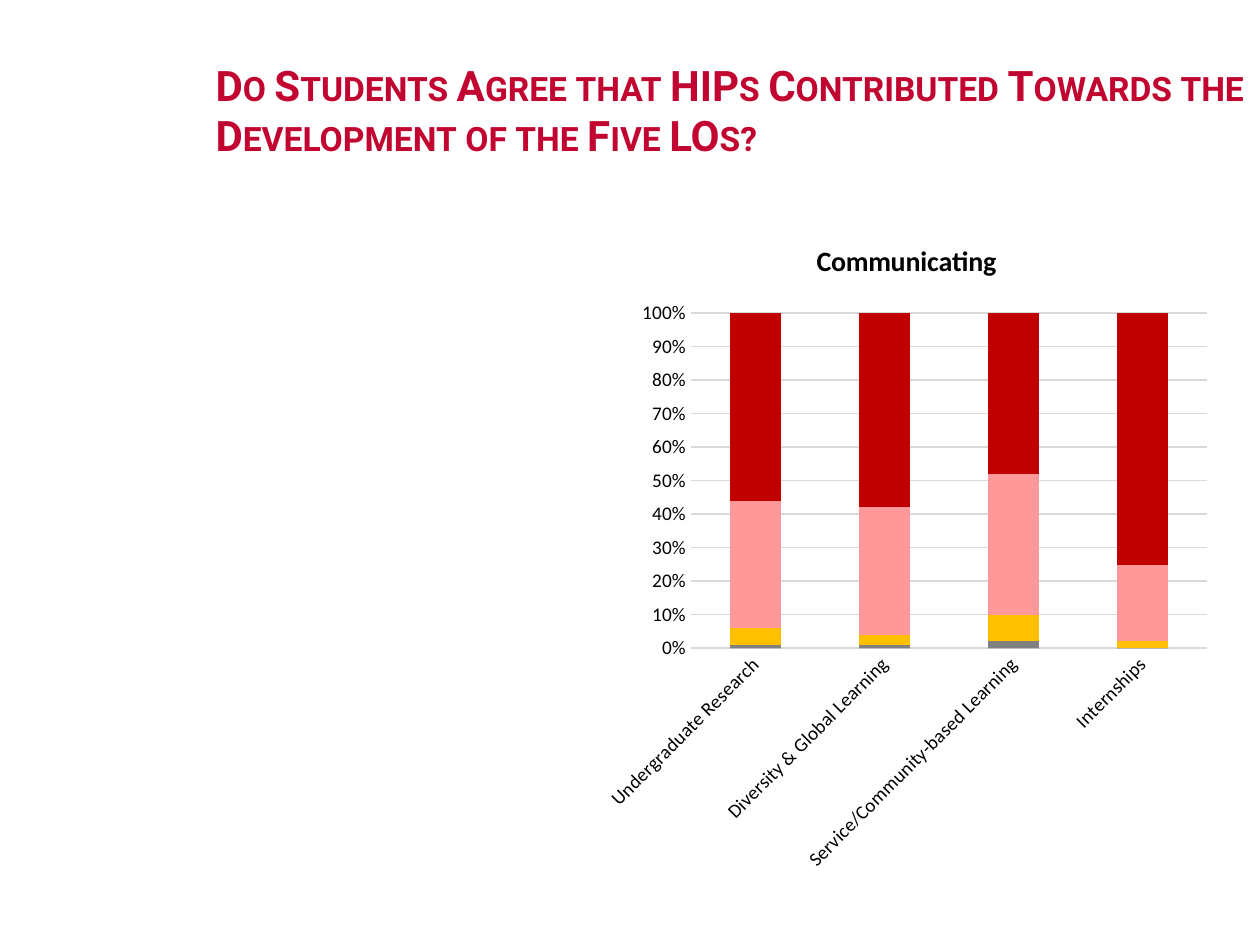
from pptx import Presentation
from pptx.chart.data import CategoryChartData
from pptx.dml.color import RGBColor
from pptx.enum.chart import XL_CHART_TYPE as ChartType, XL_TICK_MARK as TickMark
from pptx.enum.text import MSO_ANCHOR as Anchor, MSO_AUTO_SIZE as AutoSize, PP_ALIGN as Align
from pptx.util import Pt

CRIMSON = RGBColor(0xC2, 0x04, 0x30)
BLACK = RGBColor(0, 0, 0)
GRAY = RGBColor(0x80, 0x80, 0x80)
GOLD = RGBColor(0xFF, 0xC0, 0x00)
PINK = RGBColor(0xFF, 0x99, 0x99)
RED = RGBColor(0xC0, 0x00, 0x00)
GRID = RGBColor(0xD9, 0xD9, 0xD9)

HEADING = "Do Students Agree that HIPs Contributed Towards the Development of the Five LOs?"
OUTCOME = "Communicating"
PRACTICES = ["Undergraduate Research", "Diversity & Global Learning",
             "Service/Community-based Learning", "Internships"]
RESPONSES = [
    ("Series 1", (0, 0, 0, 0), BLACK),
    ("Series 2", (1, 1, 2, 0), GRAY),
    ("Series 3", (5, 3, 8, 2), GOLD),
    ("Series 4", (38, 38, 42, 23), PINK),
    ("Series 5", (56, 58, 48, 76), RED),
]


def style(font, name, size, color, bold=False):
    font.name = name
    font.size = Pt(size)
    font.bold = bold
    font.color.rgb = color


def add_heading(slide):
    heading = slide.shapes.title
    heading.left, heading.top, heading.width, heading.height = Pt(116), Pt(0), Pt(604), Pt(124)
    frame = heading.text_frame
    frame.text = HEADING
    frame.word_wrap = True
    frame.auto_size = AutoSize.NONE
    frame.vertical_anchor = Anchor.BOTTOM
    frame.margin_bottom = Pt(32.5)
    line = frame.paragraphs[0]
    line.alignment = Align.LEFT
    style(line.font, "Roboto", 24, CRIMSON, True)
    line.font._rPr.set("cap", "small")


def add_agreement_chart(slide):
    data = CategoryChartData(number_format="0")
    data.categories = PRACTICES
    for name, shares, _ in RESPONSES:
        data.add_series(name, shares)
    chart = slide.shapes.add_chart(ChartType.COLUMN_STACKED_100, Pt(339), Pt(124),
                                   Pt(358), Pt(381.5), data).chart
    style(chart.font, "Calibri", 11, BLACK)
    chart.has_legend = False
    chart.has_title = True
    chart.chart_title.include_in_layout = False
    caption = chart.chart_title.text_frame
    caption.text = OUTCOME
    style(caption.paragraphs[0].font, "Calibri", 16, BLACK, True)

    columns = chart.plots[0]
    columns.gap_width = 150
    columns.overlap = 100
    for series, (_, _, color) in zip(columns.series, RESPONSES):
        series.format.fill.solid()
        series.format.fill.fore_color.rgb = color

    practices, shares = chart.category_axis, chart.value_axis
    for axis in (practices, shares):
        axis.major_tick_mark = axis.minor_tick_mark = TickMark.NONE
        style(axis.tick_labels.font, "Calibri", 11, BLACK)
    shares.minimum_scale, shares.maximum_scale, shares.major_unit = 0, 1, 0.1
    shares.tick_labels.number_format = "0%"
    shares.tick_labels.number_format_is_linked = False
    shares.format.line.fill.background()
    shares.has_major_gridlines = True
    for line in (practices.format.line, shares.major_gridlines.format.line):
        line.color.rgb = GRID
        line.width = Pt(0.75)
    practices._element.txPr.bodyPr.set("rot", "-2700000")


def main():
    deck = Presentation()
    deck.slide_width, deck.slide_height = Pt(720), Pt(540)
    slide = deck.slides.add_slide(deck.slide_layouts[5])
    add_heading(slide)
    add_agreement_chart(slide)
    deck.save("out.pptx")


if __name__ == "__main__":
    main()
